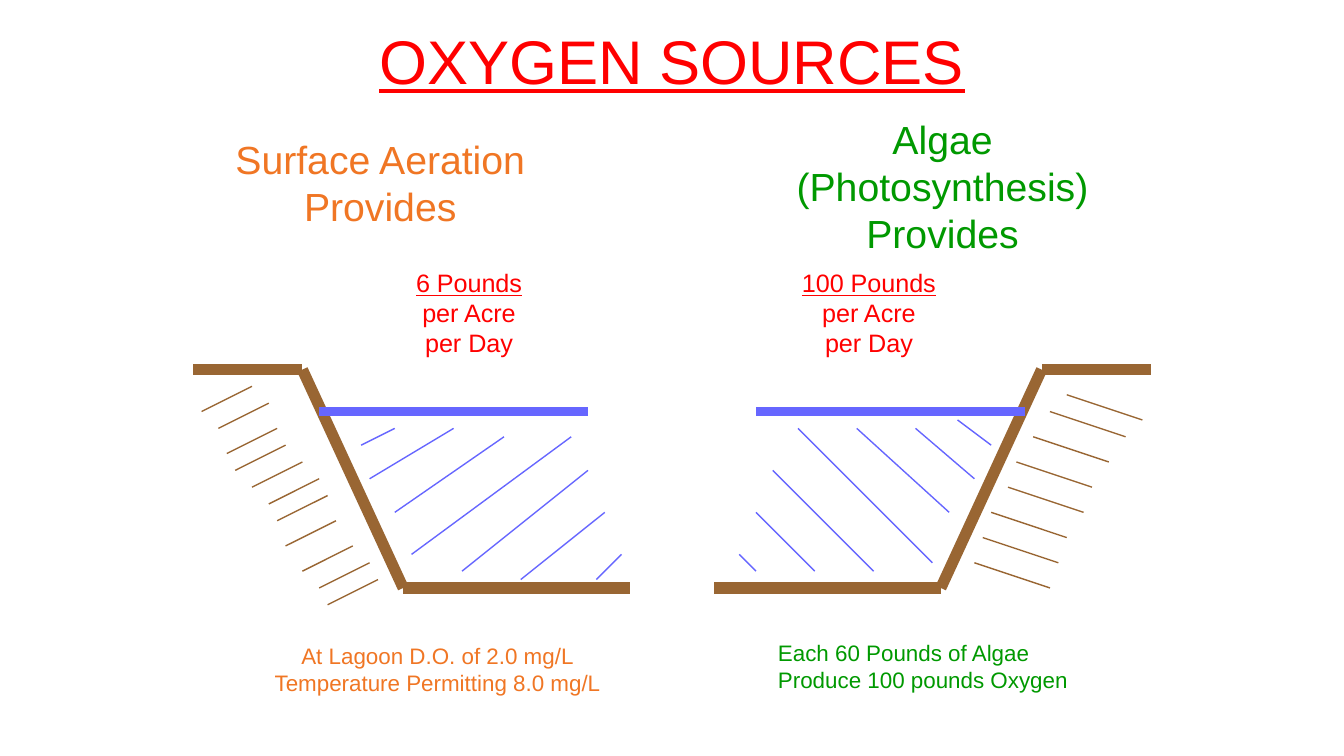
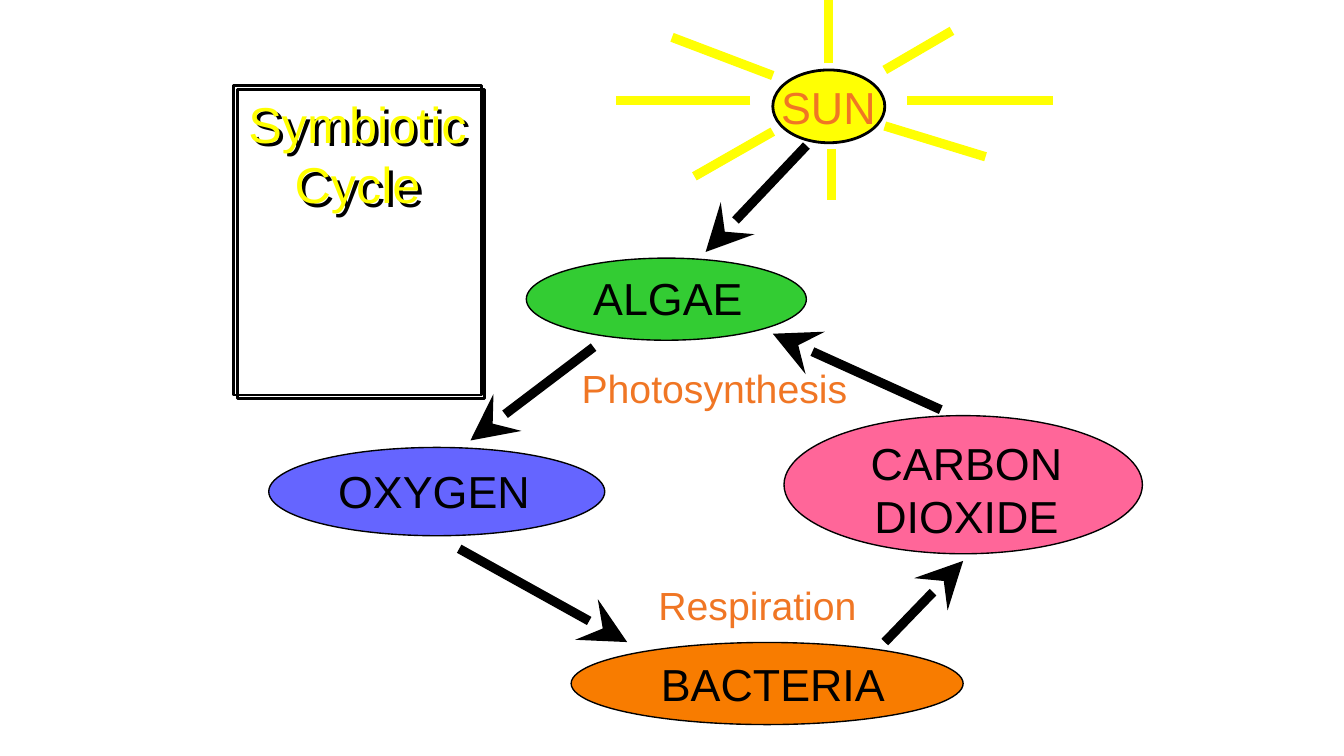
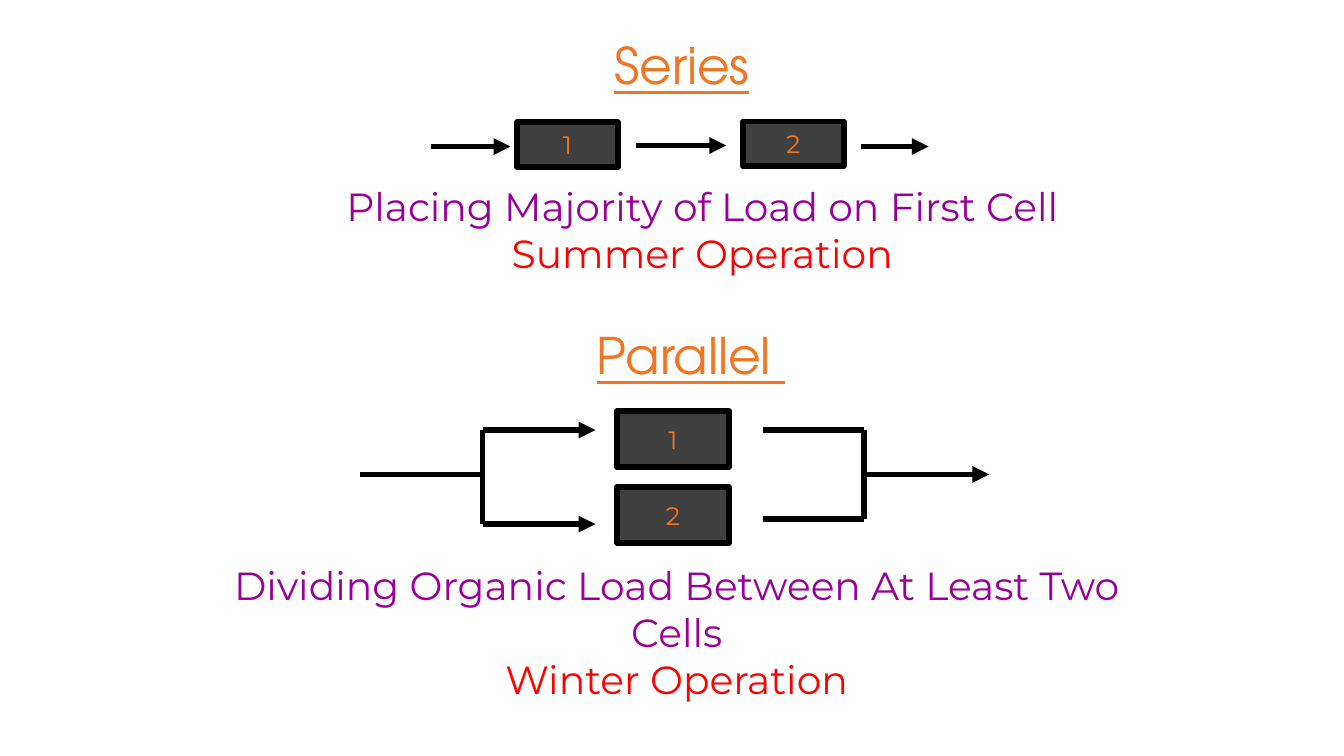
from lxml import etree
from pptx import Presentation
from pptx.dml.color import RGBColor
from pptx.enum.shapes import MSO_CONNECTOR, MSO_SHAPE
from pptx.enum.text import MSO_ANCHOR, MSO_AUTO_SIZE as AUTO_SIZE, PP_ALIGN as ALIGN
from pptx.oxml.ns import qn
from pptx.util import Pt

SLIDE_WIDTH, SLIDE_HEIGHT = 720, 405
TITLE_ONLY = 5

ORANGE, RED, GREEN, PURPLE = "F07624", "FF0000", "009900", "990099"
BLACK, EARTH, WATER, SUNLIGHT, CELL = "000000", "996633", "6666FF", "FFFF03", "3F3F3F"
SANS, HEADING, BODY = "Arial", "TeX Gyre Adventor", "Montserrat"


def rgb(hex_color):
    return RGBColor.from_string(hex_color)


def place(shape, box):
    shape.left, shape.top, shape.width, shape.height = (Pt(length) for length in box)


def write(shape, text, size, color, font=SANS, align=ALIGN.CENTER, wrap=False,
          underline=False, last_color=None, anchor=MSO_ANCHOR.TOP, grow=True):
    """Fill a shape with text; underline marks the first paragraph only."""
    frame = shape.text_frame
    frame.text = text
    frame.word_wrap = wrap
    frame.vertical_anchor = anchor
    frame.auto_size = AUTO_SIZE.SHAPE_TO_FIT_TEXT if grow else AUTO_SIZE.NONE
    for index, paragraph in enumerate(frame.paragraphs):
        paragraph.alignment = align
        is_last = index == len(frame.paragraphs) - 1
        for run in paragraph.runs:
            run.font.name = font
            run.font.size = Pt(size)
            run.font.underline = underline and index == 0
            run.font.color.rgb = rgb(last_color if last_color and is_last else color)


def add_titled_slide(presentation, title, box, size, color, **style):
    slide = presentation.slides.add_slide(presentation.slide_layouts[TITLE_ONLY])
    place(slide.shapes.title, box)
    write(slide.shapes.title, title, size, color, **style)
    return slide


def add_label(slide, text, box, size, color, **style):
    label = slide.shapes.add_textbox(*(Pt(length) for length in box))
    write(label, text, size, color, **style)
    place(label, box)


def add_line(slide, start, end, color, width, head=None, head_size="med"):
    line = slide.shapes.add_connector(
        MSO_CONNECTOR.STRAIGHT, *(Pt(length) for length in (*start, *end)))
    line.line.color.rgb = rgb(color)
    line.line.width = Pt(width)
    properties = line.element.spPr
    if head:
        etree.SubElement(properties.find(qn("a:ln")), qn("a:tailEnd"),
                         type=head, w=head_size, len=head_size)
    etree.SubElement(properties, qn("a:effectLst"))


def add_filled_shape(slide, kind, box, fill, line_width):
    shape = slide.shapes.add_shape(kind, *(Pt(length) for length in box))
    shape.shadow.inherit = False
    shape.fill.solid()
    shape.fill.fore_color.rgb = rgb(fill)
    shape.line.color.rgb = rgb(BLACK)
    shape.line.width = Pt(line_width)
    return shape


def add_oval(slide, box, fill, text, text_box, color=BLACK, line_width=0.75):
    add_filled_shape(slide, MSO_SHAPE.OVAL, box, fill, line_width)
    add_label(slide, text, text_box, 24, color)


def add_cell(slide, number, box):
    cell = add_filled_shape(slide, MSO_SHAPE.RECTANGLE, box, CELL, 3)
    write(cell, number, 13.5, ORANGE, font=BODY, anchor=MSO_ANCHOR.MIDDLE, grow=False)


def add_hard_shadow(shape):
    effects = etree.SubElement(shape.element.spPr, qn("a:effectLst"))
    shadow = etree.SubElement(effects, qn("a:outerShdw"), blurRad="0", dist=str(Pt(2.8)),
                              dir="2700000", algn="ctr", rotWithShape="0")
    etree.SubElement(shadow, qn("a:srgbClr"), val=BLACK)


def add_lagoon_outline(slide):
    """Draw the left bank and water surface, and mirror them to the right."""
    bank = [(103.5, 198), (162, 198), (216, 315), (337.5, 315)]
    surface = [(171, 220.5), (315, 220.5)]
    for outline, color, width in ((bank, EARTH, 6), (surface, WATER, 4.5)):
        mirrored = [(SLIDE_WIDTH - x, y) for x, y in outline]
        for points in (outline, mirrored):
            for start, end in zip(points, points[1:]):
                add_line(slide, start, end, color, width)


def add_lagoon_hatching(slide):
    water_strokes = [
        ((193.5, 238.5), (211.5, 229.5)), ((198, 256.5), (243, 229.5)),
        ((211.5, 274.5), (270, 234)), ((220.5, 297), (306, 234)),
        ((247.5, 306), (315, 252)), ((279, 310.5), (324, 274.5)),
        ((319.5, 310.5), (333, 297)),
        ((531, 238.5), (513, 225)), ((522, 256.5), (490.5, 229.5)),
        ((508.5, 274.5), (459, 229.5)), ((499.5, 301.5), (427.5, 229.5)),
        ((468, 306), (414, 252)), ((436.5, 306), (405, 274.5)),
        ((405, 306), (396, 297)),
    ]
    for start, end in water_strokes:
        add_line(slide, start, end, WATER, 0.75)

    left_starts = [(135, 207), (144, 216), (148.5, 229.5), (153, 238.5), (162, 247.5),
                   (171, 256.5), (175.5, 265.5), (180, 279), (189, 292.5),
                   (198, 301.5), (202.5, 310.5)]
    right_starts = [(571.5, 211.5), (562.5, 220.5), (553.5, 234), (544.5, 247.5),
                    (540, 261), (531, 274.5), (526.5, 288), (522, 301.5)]
    for starts, reach in ((left_starts, -27), (right_starts, 40.5)):
        for x, y in starts:
            add_line(slide, (x, y), (x + reach, y + 13.5), EARTH, 0.75)


def build_oxygen_sources(presentation):
    slide = add_titled_slide(presentation, "OXYGEN SOURCES", (90, 8.6, 540, 47.5),
                             33, RED, wrap=True, underline=True)
    add_lagoon_outline(slide)
    add_lagoon_hatching(slide)
    add_label(slide, "Surface Aeration\nProvides", (118, 69, 171.5, 58.3), 21, ORANGE)
    add_label(slide, "Algae\n(Photosynthesis)\nProvides", (419, 58.3, 172, 83.5), 21, GREEN)
    add_label(slide, "6 Pounds\nper Acre\nper Day", (215.3, 139.7, 72, 56.2),
              13.5, RED, underline=True)
    add_label(slide, "100 Pounds\nper Acre\nper Day", (422, 139.7, 87, 56.2),
              13.5, RED, underline=True)
    add_label(slide, "At Lagoon D.O. of 2.0 mg/L\nTemperature Permitting 8.0 mg/L",
              (139, 340.5, 191, 36), 12, ORANGE)
    add_label(slide, "Each 60 Pounds of Algae\nProduce 100 pounds Oxygen",
              (409.7, 339, 170.6, 36), 12, GREEN, align=ALIGN.LEFT)


def build_symbiotic_cycle(presentation):
    slide = add_titled_slide(presentation, "Symbiotic\nCycle", (125.3, 46, 132.5, 72.7),
                             27, "FFFF00")
    frame = slide.shapes.title
    frame.line.color.rgb = rgb(BLACK)
    frame.line.width = Pt(1.5)
    add_hard_shadow(frame)

    add_oval(slide, (414, 37.5, 60, 39), SUNLIGHT, "SUN", (411, 39, 65.5, 36), ORANGE, 1.5)
    rays = [
        ((474, 37.5), (510, 16.5)), ((414, 70.5), (372, 94.5)),
        ((474, 67.5), (528, 84)), ((414, 40.5), (360, 20)),
        ((445.5, 80), (445.5, 107)), ((444, 34), (444, 0)),
        ((402, 54), (330, 54)), ((486, 54), (564, 54)),
    ]
    for start, end in rays:
        add_line(slide, start, end, SUNLIGHT, 5)

    add_oval(slide, (282, 138.3, 150, 44), "33CC33", "ALGAE", (310.3, 141.3, 95, 36))
    add_oval(slide, (144, 239.7, 180, 47.3), "6565FF", "OXYGEN", (173.5, 244.7, 118, 36))
    add_oval(slide, (306, 344.2, 210, 44), "F87C00", "BACTERIA", (346.3, 348.3, 135.4, 36))
    add_oval(slide, (420, 222.7, 192, 74), "FF6699", "CARBON\nDIOXIDE",
             (458.7, 229.6, 118, 65.5))
    arrows = [
        ((432, 78), (378, 135)), ((318, 186), (252, 236)), ((246, 294), (336, 344)),
        ((474, 344), (516, 300.5)), ((504, 219.5), (414, 178.8)),
    ]
    for start, end in arrows:
        add_line(slide, start, end, BLACK, 5, "stealth", "lg")

    add_label(slide, "Photosynthesis", (304.5, 191.5, 158.4, 32.4), 21, ORANGE,
              align=ALIGN.LEFT)
    add_label(slide, "Respiration", (345.6, 308, 121.7, 32.4), 21, ORANGE,
              align=ALIGN.LEFT)


def build_series_and_parallel(presentation):
    heading = dict(font=HEADING, align=ALIGN.LEFT, underline=True)
    caption = dict(font=BODY, wrap=True, last_color=RED)

    slide = add_titled_slide(presentation, "Series", (321.8, 14.4, 99.4, 40.3),
                             27, ORANGE, **heading)
    add_cell(slide, "1", (277, 65.5, 54, 24))
    add_cell(slide, "2", (398, 65, 54, 24))
    for left, right, y in ((231, 273.5, 78.5), (340.5, 389, 78), (461.5, 497.5, 78.5)):
        add_line(slide, (left, y), (right, y), BLACK, 3, "triangle")
    add_label(slide, "Placing Majority of Load on First Cell\nSummer Operation",
              (122.4, 94.3, 507.6, 58.3), 21, PURPLE, **caption)

    add_label(slide, "Parallel ", (312.5, 170, 116.6, 40.3), 27, ORANGE,
              wrap=True, **heading)
    add_cell(slide, "1", (330.5, 220.3, 60, 30))
    add_cell(slide, "2", (330.5, 260.9, 60, 30))
    split, merge, middle, upper = 258.5, 463, 254.2, 230.4
    split_lower, merge_lower = 280.8, 278
    pipes = [
        ((split, upper), (319, upper), "triangle"),
        ((split, split_lower), (319, split_lower), "triangle"),
        ((split, upper), (split, split_lower), None),
        ((193, middle), (split, middle), None),
        ((409, upper), (merge, upper), None),
        ((409, merge_lower), (merge, merge_lower), None),
        ((merge, upper), (merge, merge_lower), None),
        ((merge, middle), (530, middle), "triangle"),
    ]
    for start, end, head in pipes:
        add_line(slide, start, end, BLACK, 3, head)
    add_label(slide, "Dividing Organic Load Between At Least Two Cells\nWinter Operation",
              (108.7, 297.4, 507.6, 83.5), 21, PURPLE, **caption)


def main():
    presentation = Presentation()
    presentation.slide_width = Pt(SLIDE_WIDTH)
    presentation.slide_height = Pt(SLIDE_HEIGHT)
    build_oxygen_sources(presentation)
    build_symbiotic_cycle(presentation)
    build_series_and_parallel(presentation)
    presentation.save("out.pptx")


if __name__ == "__main__":
    main()
